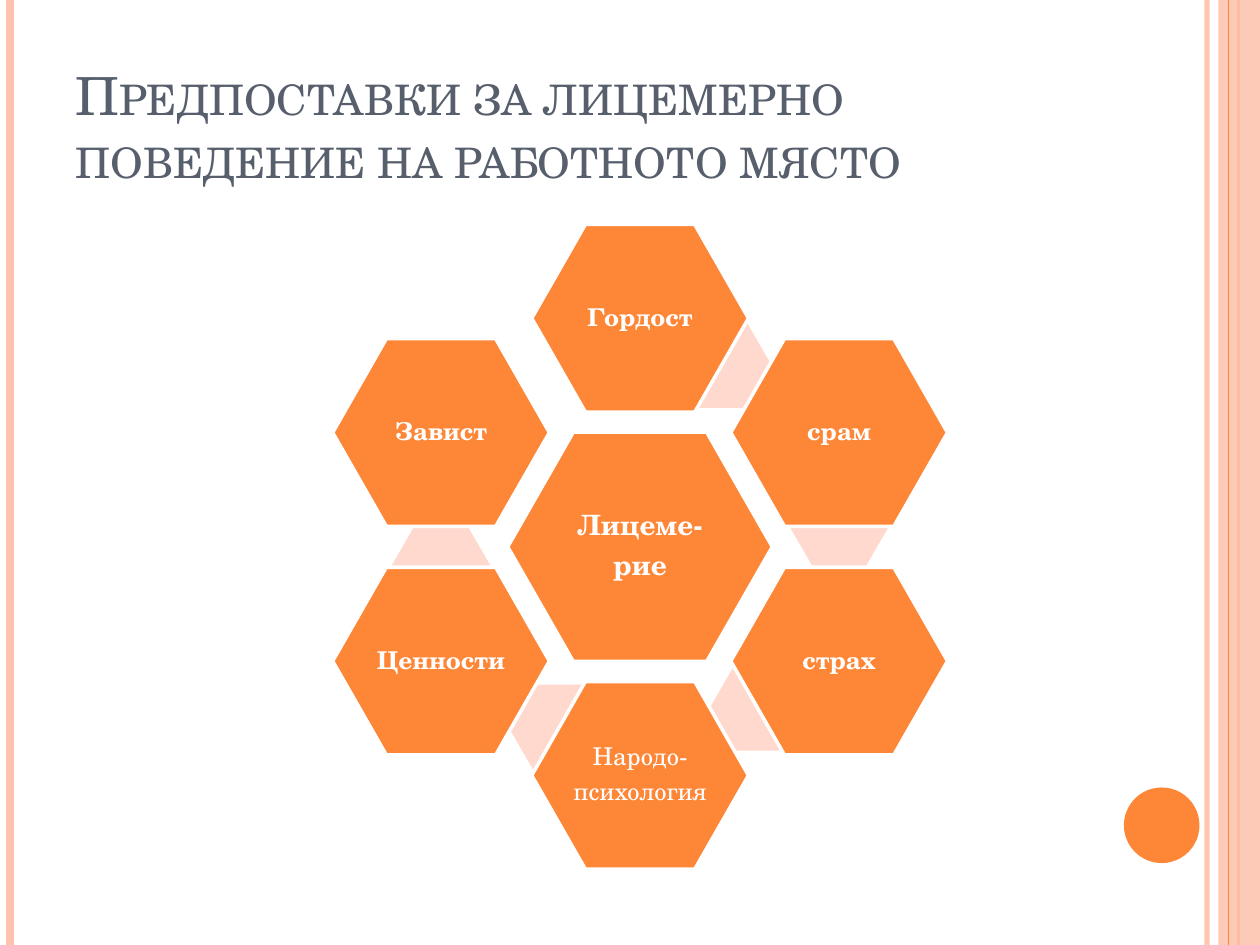
from dataclasses import dataclass
from pptx import Presentation
from pptx.dml.color import RGBColor
from pptx.enum.shapes import MSO_CONNECTOR, MSO_SHAPE
from pptx.enum.text import MSO_ANCHOR, PP_ALIGN
from pptx.oxml.ns import qn
from pptx.shapes.autoshape import Shape
from pptx.slide import Slide
from pptx.util import Inches, Pt
from lxml.etree import SubElement

WIDE, HIGH = 10, 7.5
MID_X, MID_Y = 5.08, 4.34
COL, ROW = 1.58, 0.907
FONT = "TeX Gyre Schola"
ORANGE = RGBColor(0xFE, 0x86, 0x37)
PEACH = RGBColor(0xFE, 0xC3, 0xAE)
PALE = RGBColor(0xFF, 0xD9, 0xCE)
WHITE = RGBColor(0xFF, 0xFF, 0xFF)
SLATE = RGBColor(0x57, 0x5F, 0x6D)


@dataclass(frozen=True)
class Rule:
    left: float
    color: RGBColor
    weight: float
    alpha: int = 100


@dataclass(frozen=True)
class Kind:
    wide: float
    high: float
    adj: float
    fill: RGBColor
    edge: bool
    size: int = 14


@dataclass(frozen=True)
class Cell:
    kind: Kind
    col: float
    row: float
    text: str = ""
    bold: bool = True


CORE = Kind(2.1, 1.82, 0.286, ORANGE, True, 16)
LEAF = Kind(1.72, 1.49, 0.286, ORANGE, True)
LINK = Kind(0.79, 0.68, 0.289, PALE, False)

BACK = [
    Rule(0.958, PEACH, 3, 93),
    Rule(0.008, PEACH, 4.5),
    Rule(0.983, ORANGE, 1.5),
]
FRONT = Rule(0.975, ORANGE, 0.75)

CELLS = [
    Cell(CORE, 0, 0, "Лицеме-\nрие"),
    Cell(LINK, 0.41, -1.59),
    Cell(LEAF, 0, -2, "Гордост"),
    Cell(LINK, 1, -0.18),
    Cell(LEAF, 1, -1, "срам"),
    Cell(LINK, 0.6, 1.41),
    Cell(LEAF, 1, 1, "страх"),
    Cell(LINK, -0.41, 1.58),
    Cell(LEAF, 0, 2, "Народо-\nпсихология", False),
    Cell(LINK, -1, 0.17),
    Cell(LEAF, -1, 1, "Ценности"),
    Cell(LEAF, -1, -1, "Завист"),
]


def fade(part, alpha: int) -> None:
    for tone in part.iter(qn("a:srgbClr")):
        SubElement(tone, qn("a:alpha"), val=str(alpha * 1000))


def draw_rule(slide: Slide, rule: Rule) -> None:
    x = Inches(rule.left * WIDE)
    line = slide.shapes.add_connector(MSO_CONNECTOR.STRAIGHT, x, 0, x, Inches(HIGH))
    line.line.color.rgb = rule.color
    line.line.width = Pt(rule.weight)
    props = line.element.spPr
    if rule.alpha < 100:
        fade(props, rule.alpha)
    SubElement(props, qn("a:effectLst"))


def draw_shape(slide: Slide, form: MSO_SHAPE, box: tuple, fill: RGBColor) -> Shape:
    shape = slide.shapes.add_shape(form, *map(Inches, box))
    shape.shadow.inherit = False
    shape.fill.solid()
    shape.fill.fore_color.rgb = fill
    shape.line.fill.background()
    return shape


def draw_cell(slide: Slide, cell: Cell) -> None:
    kind = cell.kind
    left = MID_X + cell.col * COL - kind.wide / 2
    top = MID_Y + cell.row * ROW - kind.high / 2
    box = (left, top, kind.wide, kind.high)
    shape = draw_shape(slide, MSO_SHAPE.HEXAGON, box, kind.fill)
    shape.adjustments[0] = kind.adj
    if kind.edge:
        shape.line.color.rgb = WHITE
        shape.line.width = Pt(2)
    if cell.text:
        write(shape, cell)


def write(shape: Shape, cell: Cell) -> None:
    frame = shape.text_frame
    frame.text = cell.text
    frame.word_wrap = False
    frame.vertical_anchor = MSO_ANCHOR.MIDDLE
    frame.margin_left = frame.margin_right = Inches(0.02)
    frame.margin_top = frame.margin_bottom = Inches(0.02)
    for para in frame.paragraphs:
        para.alignment = PP_ALIGN.CENTER
        para.line_spacing = 0.9
        para.space_after = Pt(cell.kind.size * 0.35)
        for run in para.runs:
            font = run.font
            font.name, font.size, font.bold = FONT, Pt(cell.kind.size), cell.bold
            font.color.rgb = WHITE


def draw_title(slide: Slide, text: str) -> None:
    box = map(Inches, (0.05 * WIDE, 0.04 * HIGH, 8.17, 1.25))
    frame = slide.shapes.add_textbox(*box).text_frame
    frame.word_wrap = True
    frame.vertical_anchor = MSO_ANCHOR.BOTTOM
    frame.text = text
    run = frame.paragraphs[0].runs[0]
    run.font.name, run.font.size = FONT, Pt(30)
    run.font.color.rgb = SLATE
    run.font._element.set("cap", "small")


def main() -> None:
    deck = Presentation()
    deck.slide_width, deck.slide_height = Inches(WIDE), Inches(HIGH)
    slide = deck.slides.add_slide(deck.slide_layouts[6])
    for rule in BACK:
        draw_rule(slide, rule)
    band = draw_shape(slide, MSO_SHAPE.RECTANGLE, (9.67, 0, 0.33, HIGH), PEACH)
    fade(band.element.spPr, 87)
    draw_rule(slide, FRONT)
    draw_shape(slide, MSO_SHAPE.OVAL, (8.92, 6.25, 0.6, 0.6), ORANGE)
    draw_title(slide, "Предпоставки за лицемерно поведение на работното място")
    for cell in CELLS:
        draw_cell(slide, cell)
    deck.save("out.pptx")


if __name__ == "__main__":
    main()
